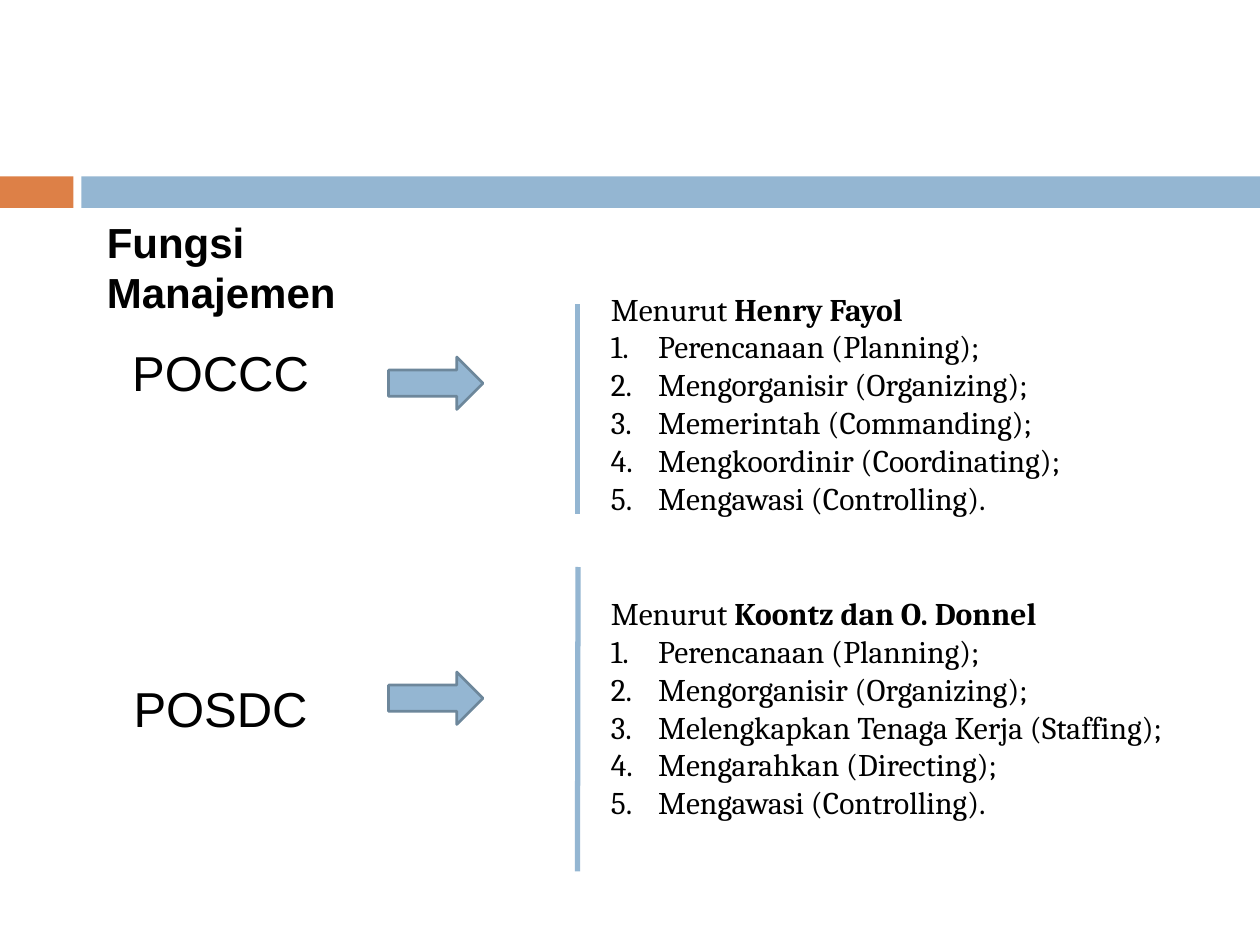
"""Build the slide on management functions according to Fayol and to Koontz and O. Donnel."""
from lxml import etree
from pptx import Presentation
from pptx.dml.color import RGBColor
from pptx.enum import shapes, text
from pptx.oxml import ns
from pptx.util import Pt

BLUE, ORANGE, OUTLINE, BLACK = "94B6D2", "DD8047", "6D879B", "000000"


def color(value):
    return RGBColor.from_string(value)


def add_text(box, paragraphs, align, font):
    shape = slide.shapes.add_textbox(*map(Pt, box))
    frame = shape.text_frame
    frame.word_wrap = True
    frame.auto_size = text.MSO_AUTO_SIZE.NONE
    for index, runs in enumerate(paragraphs):
        paragraph = frame.paragraphs[0] if index == 0 else frame.add_paragraph()
        paragraph.alignment = align
        for content, bold in runs:
            run = paragraph.add_run()
            run.text = content
            run.font.color.rgb = color(BLACK)
            for name, value in {**font, "bold": bold}.items():
                setattr(run.font, name, value)
    return frame


presentation = Presentation()
presentation.slide_width, presentation.slide_height = Pt(720), Pt(540)
slide = presentation.slides.add_slide(presentation.slide_layouts[6])
left, center = text.PP_ALIGN.LEFT, text.PP_ALIGN.CENTER

for x, width, fill in [(0, 42, ORANGE), (46.5, 673.5, BLUE)]:
    band = slide.shapes.add_shape(
        shapes.MSO_SHAPE.RECTANGLE, Pt(x), Pt(100.8), Pt(width), Pt(18))
    band.shadow.inherit = False
    band.fill.solid()
    band.fill.fore_color.rgb = color(fill)
    band.line.fill.background()

add_text((54, 120, 155, 58.3), [[("Fungsi Manajemen", True)]], left,
         {"name": "Arial", "size": Pt(24)})

theories = [
    {"acronym": "POCCC", "author": "Henry Fayol", "acronym_top": 192,
     "arrow_top": 204, "list_top": 162, "rule": (330, 174, 330, 294),
     "functions": ["Perencanaan (Planning);", "Mengorganisir (Organizing);",
                   "Memerintah (Commanding);", "Mengkoordinir (Coordinating);",
                   "Mengawasi (Controlling)."]},
    {"acronym": "POSDC", "author": "Koontz dan O. Donnel", "acronym_top": 384,
     "arrow_top": 384, "list_top": 336, "rule": (330.3, 324, 330, 498),
     "functions": ["Perencanaan (Planning);", "Mengorganisir (Organizing);",
                   "Melengkapkan Tenaga Kerja (Staffing);",
                   "Mengarahkan (Directing);", "Mengawasi (Controlling)."]},
]

for theory in theories:
    heading = [("Menurut ", False), (theory["author"], True)]
    items = [[(function, False)] for function in theory["functions"]]
    frame = add_text((342, theory["list_top"], 360, 138), [heading] + items, left,
                     {"name": "Cambria", "size": Pt(18)})
    for paragraph in frame.paragraphs[1:]:
        properties = paragraph._p.get_or_add_pPr()
        properties.set("marL", str(Pt(27)))
        properties.set("indent", str(-Pt(27)))
        etree.SubElement(properties, ns.qn("a:buFont"), typeface="+mj-lt")
        etree.SubElement(properties, ns.qn("a:buAutoNum"), type="arabicPeriod")

    rule = slide.shapes.add_connector(
        shapes.MSO_CONNECTOR.STRAIGHT, *map(Pt, theory["rule"]))
    rule.line.color.rgb = color(BLUE)
    rule.line.width = Pt(3)
    etree.SubElement(rule._element.spPr, ns.qn("a:effectLst"))

    add_text((60, theory["acronym_top"], 132, 41), [[(theory["acronym"], False)]],
             center, {"name": "Arial", "size": Pt(28)})

    arrow = slide.shapes.add_shape(
        shapes.MSO_SHAPE.RIGHT_ARROW, Pt(222), Pt(theory["arrow_top"]), Pt(54), Pt(30))
    arrow.shadow.inherit = False
    arrow.fill.solid()
    arrow.fill.fore_color.rgb = color(BLUE)
    arrow.line.color.rgb = color(OUTLINE)
    arrow.line.width = Pt(1.5)

presentation.save("out.pptx")
